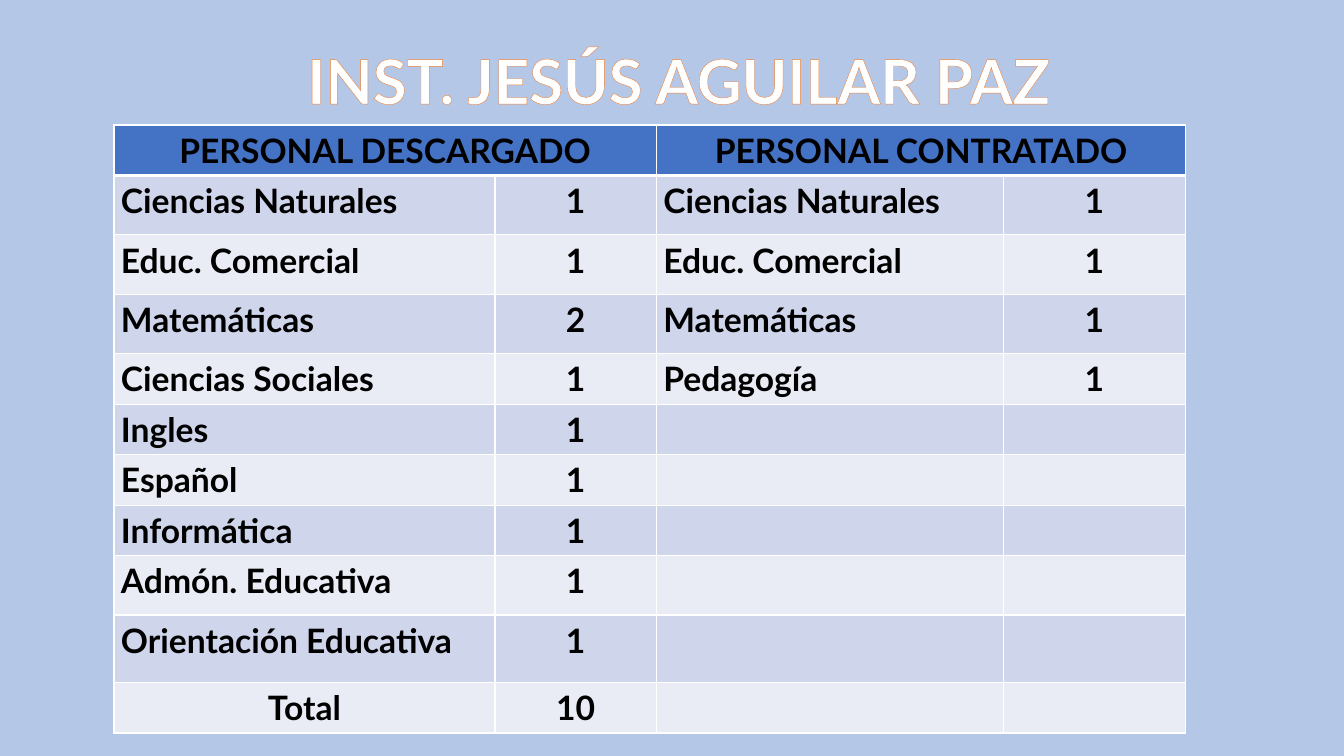
from lxml.etree import SubElement
from pptx import Presentation
from pptx.dml.color import RGBColor
from pptx.enum.text import MSO_ANCHOR, PP_ALIGN
from pptx.oxml import parse_xml
from pptx.oxml.ns import nsdecls, qn
from pptx.util import Inches, Pt

SKY = RGBColor(0xB4, 0xC7, 0xE7)
BLUE = RGBColor(0x44, 0x72, 0xC4)
DARK = RGBColor(0xCF, 0xD5, 0xEA)
PALE = RGBColor(0xE9, 0xEB, 0xF5)
WHITE = RGBColor(0xFF, 0xFF, 0xFF)
BLACK = RGBColor(0, 0, 0)
ORANGE = RGBColor(0xED, 0x7D, 0x31)

HEADS = ["PERSONAL DESCARGADO", "PERSONAL CONTRATADO"]
STAFF = [
    ("Ciencias Naturales", "1", "Ciencias Naturales", "1"),
    ("Educ. Comercial", "1", "Educ. Comercial", "1"),
    ("Matemáticas", "2", "Matemáticas", "1"),
    ("Ciencias Sociales", "1", "Pedagogía", "1"),
    ("Ingles", "1", "", ""),
    ("Español", "1", "", ""),
    ("Informática", "1", "", ""),
    ("Admón. Educativa", "1", "", ""),
    ("Orientación Educativa", "1", "", ""),
    ("Total", "10", "", ""),
]
WIDTHS = [3.78, 1.6, 3.44, 1.81]
HEIGHTS = [0.5, 0.59, 0.59, 0.59, 0.5, 0.5, 0.5, 0.5, 0.59, 0.67, 0.5]


class Board:
    font = "Lato"

    def __init__(self, deck):
        self.slide = deck.slides.add_slide(deck.slide_layouts[6])
        fill = self.slide.background.fill
        fill.solid()
        fill.fore_color.rgb = SKY

    def label(self, frame, text, size, color, align):
        para = frame.paragraphs[0]
        para.alignment = align
        run = para.add_run()
        run.text = text
        run.font.name = self.font
        run.font.size = Pt(size)
        run.font.bold = True
        run.font.color.rgb = color
        return run

    def title(self, text, left, top, width, height):
        box = self.slide.shapes.add_textbox(
            Inches(left), Inches(top), Inches(width), Inches(height))
        frame = box.text_frame
        frame.word_wrap = True
        frame.vertical_anchor = MSO_ANCHOR.MIDDLE
        run = self.label(frame, text, 44, WHITE, PP_ALIGN.CENTER)
        frame.paragraphs[0].line_spacing = 0.9
        line = parse_xml(
            f'<a:ln {nsdecls("a")} w="{Pt(0.52)}"><a:solidFill>'
            f'<a:srgbClr val="{ORANGE}"/></a:solidFill></a:ln>')
        run._r.get_or_add_rPr().insert(0, line)

    def border(self, cell, low):
        props = cell._tc.get_or_add_tcPr()
        for side, width in zip("LRTB", (1, 1, 1, low)):
            line = SubElement(props, qn(f"a:ln{side}"), w=str(Pt(width)))
            fill = SubElement(line, qn("a:solidFill"))
            SubElement(fill, qn("a:srgbClr"), val=str(WHITE))

    def cell(self, cell, text, color, align, low=1):
        self.border(cell, low)
        cell.fill.solid()
        cell.fill.fore_color.rgb = color
        cell.margin_left = cell.margin_right = Inches(0.07)
        cell.margin_top = cell.margin_bottom = Inches(0.05)
        if text:
            self.label(cell.text_frame, text, 24, BLACK, align)

    def table(self, left, top):
        grid = self.slide.shapes.add_table(
            len(HEIGHTS), len(WIDTHS), Inches(left), Inches(top),
            Inches(sum(WIDTHS)), Inches(sum(HEIGHTS))).table
        for col, width in zip(grid.columns, WIDTHS):
            col.width = Inches(width)
        for row, height in zip(grid.rows, HEIGHTS):
            row.height = Inches(height)
        for col in range(len(WIDTHS)):
            text = "" if col % 2 else HEADS[col // 2]
            self.cell(grid.cell(0, col), text, BLUE, PP_ALIGN.CENTER, 3)
        for col in (0, 2):
            grid.cell(0, col).merge(grid.cell(0, col + 1))
        for row, texts in enumerate(STAFF, 1):
            for col, text in enumerate(texts):
                mid = col % 2 or text == "Total"
                self.cell(grid.cell(row, col), text, DARK if row % 2 else PALE,
                          PP_ALIGN.CENTER if mid else PP_ALIGN.LEFT)


def main():
    deck = Presentation()
    deck.slide_width = Inches(13.33)
    deck.slide_height = Inches(7.5)
    board = Board(deck)
    board.title("INST. JESÚS AGUILAR PAZ", 2.59, 0.43, 8.29, 0.81)
    board.table(1.13, 1.24)
    deck.save("out.pptx")


if __name__ == "__main__":
    main()
